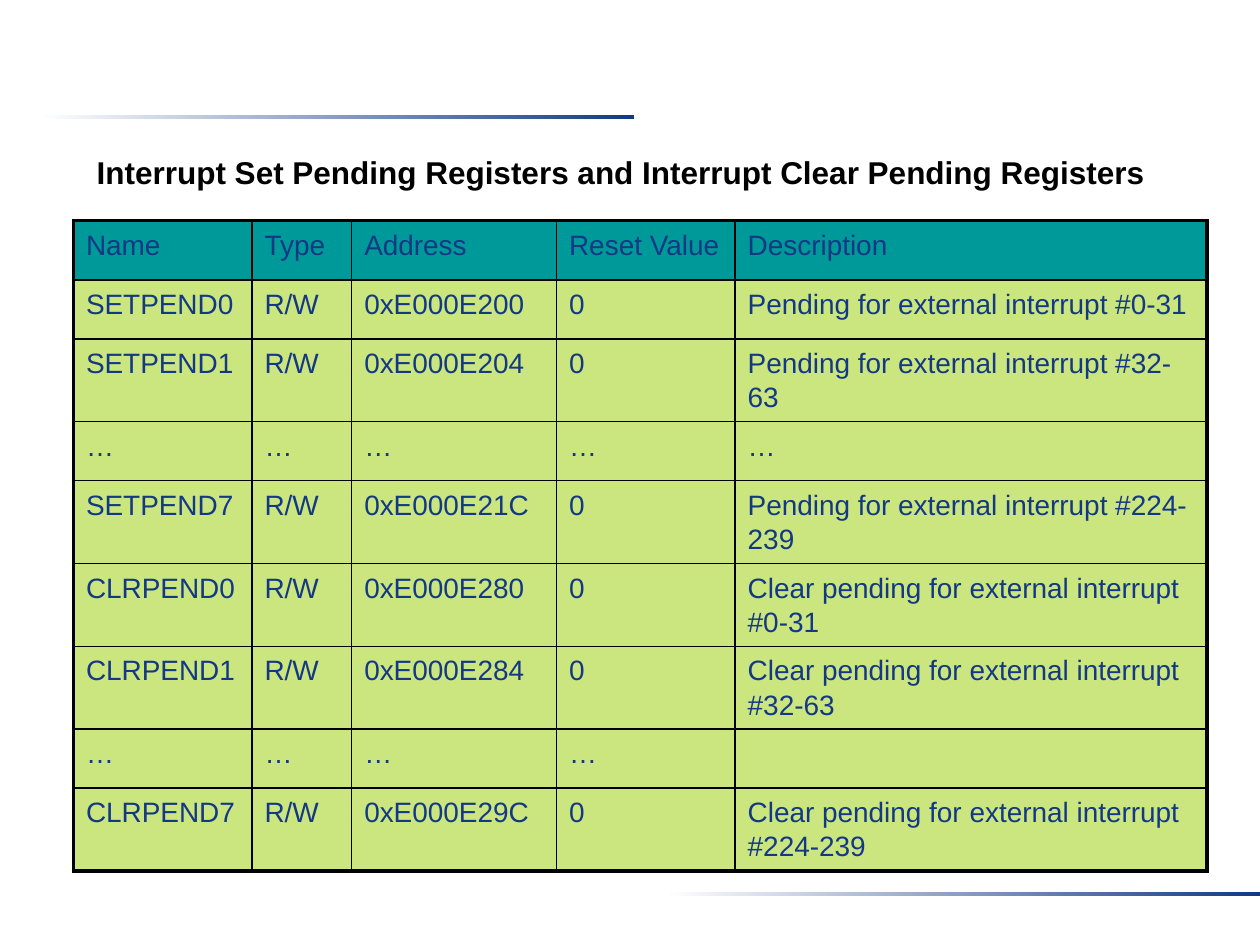
from lxml.etree import SubElement
from pptx import Presentation
from pptx.dml.color import RGBColor
from pptx.enum.shapes import MSO_SHAPE
from pptx.enum.text import MSO_AUTO_SIZE
from pptx.oxml.ns import qn
from pptx.util import Cm, Pt

WHITE = RGBColor(0xFF, 0xFF, 0xFF)
BLACK = RGBColor(0x00, 0x00, 0x00)
NAVY = RGBColor(0x13, 0x39, 0x84)
TEAL = RGBColor(0x00, 0x99, 0x99)
LIME = RGBColor(0x99, 0xCC, 0x00)

HEADING = "Interrupt Set Pending Registers and Interrupt Clear Pending Registers"
REGISTERS = [
    ("Name", "Type", "Address", "Reset Value", "Description"),
    ("SETPEND0", "R/W", "0xE000E200", "0", "Pending for external interrupt #0-31"),
    ("SETPEND1", "R/W", "0xE000E204", "0", "Pending for external interrupt #32-63"),
    ("…", "…", "…", "…", "…"),
    ("SETPEND7", "R/W", "0xE000E21C", "0", "Pending for external interrupt #224-239"),
    ("CLRPEND0", "R/W", "0xE000E280", "0", "Clear pending for external interrupt #0-31"),
    ("CLRPEND1", "R/W", "0xE000E284", "0", "Clear pending for external interrupt #32-63"),
    ("…", "…", "…", "…", ""),
    ("CLRPEND7", "R/W", "0xE000E29C", "0", "Clear pending for external interrupt #224-239"),
]
COLUMN_WIDTHS = [3.6, 2.01, 4.13, 3.6, 9.51]
ONE_LINE, TWO_LINES = 1.19, 1.67
ROW_HEIGHTS = [TWO_LINES if len(row[-1]) > 36 else ONE_LINE for row in REGISTERS]
HEADING_FORMAT = {"name": "Arial", "size": Pt(18), "bold": True}
CELL_FORMAT = {"name": "Arial", "size": Pt(16), "bold": False}


def add_text(paragraph, text, font_format, color):
    run = paragraph.add_run()
    run.text = text
    for attribute, value in font_format.items():
        setattr(run.font, attribute, value)
    run.font.color.rgb = color


def add_border(cell, side, width):
    line = SubElement(cell._tc.get_or_add_tcPr(), qn(f"a:ln{side}"), w=str(Pt(width)))
    fill = SubElement(line, qn("a:solidFill"))
    SubElement(fill, qn("a:srgbClr"), val=str(BLACK))


presentation = Presentation()
presentation.slide_width = Cm(25.4)
presentation.slide_height = Cm(19.05)
slide = presentation.slides.add_slide(presentation.slide_layouts[6])

for left, top in [(0.8, 2.32), (13.41, 17.98)]:
    rule = slide.shapes.add_shape(MSO_SHAPE.RECTANGLE, Cm(left), Cm(top), Cm(11.99), Cm(0.08))
    rule.shadow.inherit = False
    rule.line.fill.background()
    rule.fill.gradient()
    rule.fill.gradient_angle = 0
    for stop, color, position in zip(rule.fill.gradient_stops, (WHITE, NAVY), (0, 1)):
        stop.color.rgb = color
        stop.position = position

table_frame = slide.shapes.add_table(
    len(REGISTERS), len(COLUMN_WIDTHS), Cm(1.48), Cm(4.45),
    Cm(sum(COLUMN_WIDTHS)), Cm(sum(ROW_HEIGHTS)),
)
table = table_frame.table
table.first_row = False
table.horz_banding = False
for column, width in zip(table.columns, COLUMN_WIDTHS):
    column.width = Cm(width)
for row, height in zip(table.rows, ROW_HEIGHTS):
    row.height = Cm(height)

last_row, last_column = len(REGISTERS) - 1, len(COLUMN_WIDTHS) - 1
for row_index, values in enumerate(REGISTERS):
    for column_index, value in enumerate(values):
        cell = table.cell(row_index, column_index)
        outer_sides = {
            "L": column_index == 0,
            "R": column_index == last_column,
            "T": row_index == 0,
            "B": row_index == last_row,
        }
        for side, outer in outer_sides.items():
            add_border(cell, side, 2.25 if outer else 1)
        cell.fill.solid()
        cell.fill.fore_color.rgb = LIME if row_index else TEAL
        if row_index:
            fill_color = cell._tc.tcPr.find(qn("a:solidFill")).find(qn("a:srgbClr"))
            SubElement(fill_color, qn("a:alpha"), val="50000")
        if value:
            paragraph = cell.text_frame.paragraphs[0]
            paragraph.line_spacing = 1.1
            add_text(paragraph, value, CELL_FORMAT, NAVY)

heading = slide.shapes.add_textbox(Cm(1.7), Cm(2.97), Cm(21.8), Cm(1.02))
heading.text_frame.word_wrap = True
heading.text_frame.auto_size = MSO_AUTO_SIZE.SHAPE_TO_FIT_TEXT
add_text(heading.text_frame.paragraphs[0], HEADING, HEADING_FORMAT, BLACK)

presentation.save("out.pptx")
